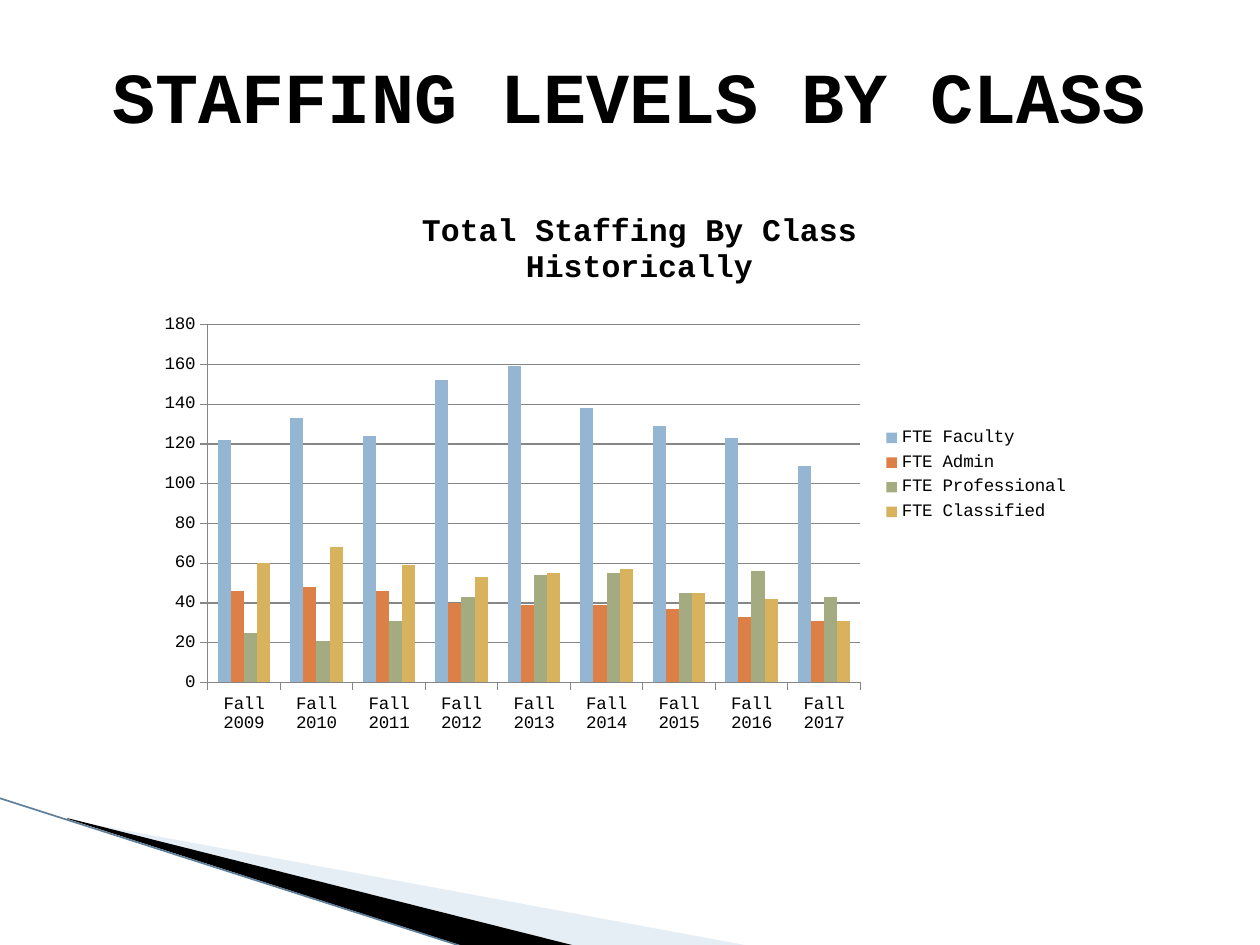
from dataclasses import dataclass

from lxml import etree
from pptx import Presentation
from pptx import util as u
from pptx.chart import data as chart_data
from pptx.dml.color import RGBColor
from pptx.enum import chart as chart_enum, shapes, text
from pptx.oxml import parse_xml
from pptx.oxml.ns import nsdecls, qn

PX = u.Inches(1) / 126
FONT = "Courier New"
BLACK = RGBColor(0x00, 0x00, 0x00)
PALE_BLUE = RGBColor(0xC0, 0xD3, 0xE6)
EDGE_BLUE = RGBColor(0x5F, 0x7F, 0x99)
GRID_GRAY = RGBColor(0x86, 0x86, 0x86)
FACULTY_BLUE = RGBColor(0x94, 0xB6, 0xD2)
ADMIN_ORANGE = RGBColor(0xDD, 0x80, 0x47)
PROFESSIONAL_GREEN = RGBColor(0xA5, 0xAB, 0x81)
CLASSIFIED_GOLD = RGBColor(0xD8, 0xB2, 0x5C)


@dataclass(frozen=True)
class Wedge:
    points: tuple[tuple[int, int], ...]
    color: RGBColor
    opacity: int = 100


@dataclass(frozen=True)
class StaffClass:
    name: str
    counts: tuple[int, ...]
    color: RGBColor


WEDGES = (
    Wedge(((69, 820), (750, 946), (575, 946), (69, 819)), PALE_BLUE, 40),
    Wedge(((67, 818), (576, 946), (469, 948), (68, 819)), BLACK),
)
TERMS = [f"Fall {year}" for year in range(2009, 2018)]
STAFF = (
    StaffClass("FTE Faculty", (122, 133, 124, 152, 159, 138, 129, 123, 109), FACULTY_BLUE),
    StaffClass("FTE Admin", (46, 48, 46, 40, 39, 39, 37, 33, 31), ADMIN_ORANGE),
    StaffClass("FTE Professional", (25, 21, 31, 43, 54, 55, 45, 56, 43), PROFESSIONAL_GREEN),
    StaffClass("FTE Classified", (60, 68, 59, 53, 55, 57, 45, 42, 31), CLASSIFIED_GOLD),
)


def px(length: int) -> u.Emu:
    return u.Emu(round(length * PX))


def write(frame, content: str, *, size: int, bold: bool = False) -> None:
    """Fill a text frame with one centred paragraph per line."""
    for index, line in enumerate(content.split("\n")):
        para = frame.add_paragraph() if index else frame.paragraphs[0]
        para.alignment = text.PP_ALIGN.CENTER
        span = para.add_run()
        span.text = line
        span.font.name = FONT
        span.font.size = u.Pt(size)
        span.font.bold = bold
        span.font.color.rgb = BLACK


def draw_wedge(page, wedge: Wedge) -> None:
    builder = page.shapes.build_freeform(*wedge.points[0], scale=PX)
    builder.add_line_segments(wedge.points[1:], close=True)
    shape = builder.convert_to_shape()
    shape.shadow.inherit = False
    shape.line.fill.background()
    shape.fill.solid()
    shape.fill.fore_color.rgb = wedge.color
    if wedge.opacity < 100:
        color = shape.fill._xPr.find(".//" + qn("a:srgbClr"))
        etree.SubElement(color, qn("a:alpha"), val=str(wedge.opacity * 1000))


def draw_edge(page) -> None:
    edge = page.shapes.add_connector(
        shapes.MSO_CONNECTOR.STRAIGHT, px(-1), px(798), px(467), px(948))
    edge.line.color.rgb = EDGE_BLUE
    edge.line.width = u.Pt(0.95)
    etree.SubElement(edge._element.spPr, qn("a:effectLst"))


def place(element, index: int, **fractions: float) -> None:
    """Give a chart part a manual layout, in fractions of the chart."""
    for old in element.findall(qn("c:layout")):
        element.remove(old)
    layout = parse_xml(f"<c:layout {nsdecls('c')}><c:manualLayout/></c:layout>")
    manual = layout[0]
    if "w" in fractions:
        etree.SubElement(manual, qn("c:layoutTarget"), val="inner")
    for mode in ("xMode", "yMode"):
        etree.SubElement(manual, qn(f"c:{mode}"), val="edge")
    for name, value in fractions.items():
        etree.SubElement(manual, qn(f"c:{name}"), val=str(value))
    element.insert(index, layout)


def draw_chart(page) -> None:
    table = chart_data.CategoryChartData()
    table.categories = TERMS
    for staff in STAFF:
        table.add_series(staff.name, staff.counts)
    chart = page.shapes.add_chart(
        chart_enum.XL_CHART_TYPE.COLUMN_CLUSTERED,
        px(147), px(204), px(935), px(542), table).chart
    chart.font.name = FONT
    chart.font.size = u.Pt(10)
    chart.font.color.rgb = BLACK

    chart.has_title = True
    write(chart.chart_title.text_frame, "Total Staffing By Class\nHistorically", size=18, bold=True)
    place(chart.chart_title._element, 1, x=0.29, y=0.01)
    place(chart._chartSpace.chart.plotArea, 0, x=0.065, y=0.223, w=0.698, h=0.66)

    chart.has_legend = True
    chart.legend.position = chart_enum.XL_LEGEND_POSITION.RIGHT
    chart.legend.include_in_layout = False

    plot = chart.plots[0]
    plot.gap_width = 150
    plot.overlap = 0
    plot.vary_by_categories = False
    for series, staff in zip(plot.series, STAFF):
        series.format.fill.solid()
        series.format.fill.fore_color.rgb = staff.color

    values = chart.value_axis
    values.minimum_scale, values.maximum_scale, values.major_unit = 0, 180, 20
    values.has_major_gridlines = True
    for axis in (values, chart.category_axis):
        axis.major_tick_mark = chart_enum.XL_TICK_MARK.OUTSIDE
    for ruled in (values, chart.category_axis, values.major_gridlines):
        ruled.format.line.color.rgb = GRID_GRAY
        ruled.format.line.width = u.Pt(0.75)


def main() -> None:
    deck = Presentation()
    deck.slide_width, deck.slide_height = px(1260), px(945)
    page = deck.slides.add_slide(deck.slide_layouts[5])
    for wedge in WEDGES:
        draw_wedge(page, wedge)
    draw_edge(page)

    title = page.shapes.title
    title.left, title.top, title.width, title.height = px(63), px(32), px(1134), px(126)
    title.text_frame.vertical_anchor = text.MSO_ANCHOR.MIDDLE
    title.text_frame.word_wrap = True
    write(title.text_frame, "STAFFING LEVELS BY CLASS", size=41, bold=True)

    draw_chart(page)
    deck.save("out.pptx")


if __name__ == "__main__":
    main()
